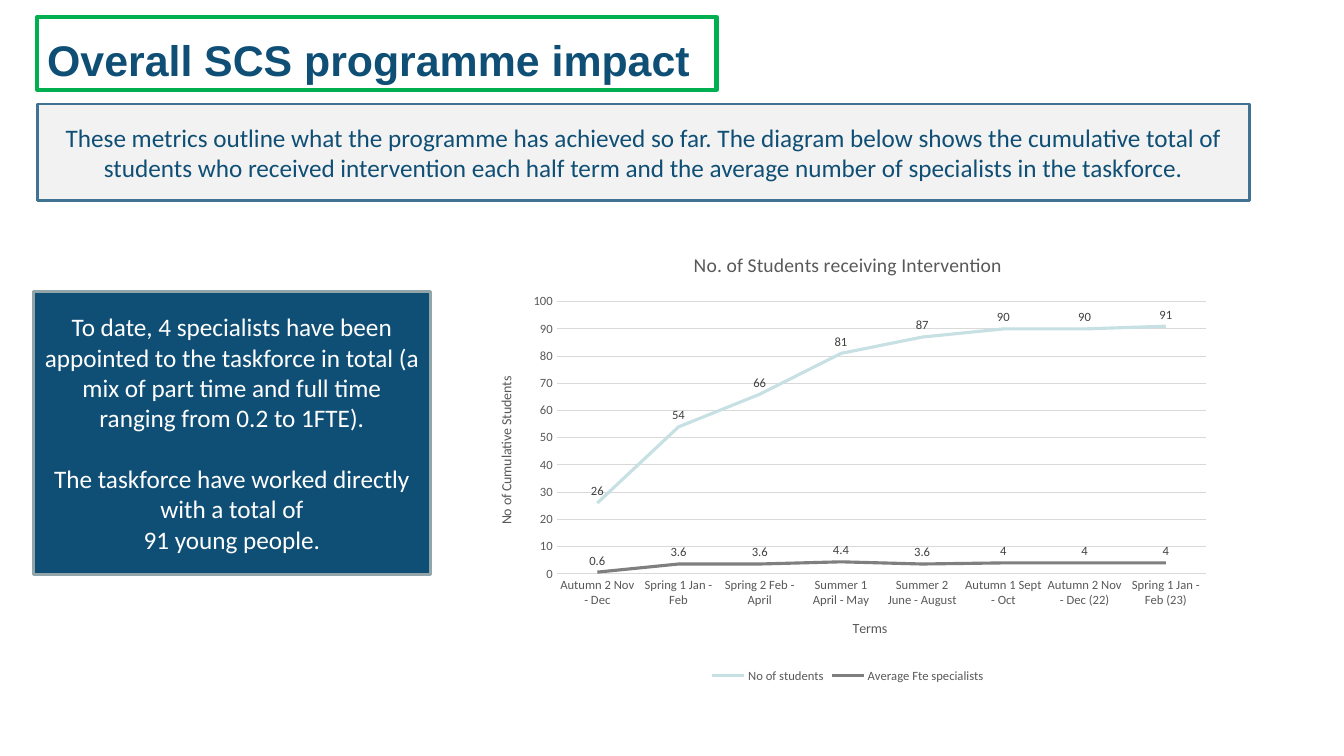
from dataclasses import dataclass

from pptx import Presentation
from pptx.chart.data import CategoryChartData as Data
from pptx.dml.color import RGBColor as Rgb
from pptx.enum.chart import XL_CHART_TYPE as Kind
from pptx.enum.chart import XL_LABEL_POSITION as Spot
from pptx.enum.chart import XL_LEGEND_POSITION as Side
from pptx.enum.chart import XL_TICK_MARK as Tick
from pptx.enum.shapes import MSO_SHAPE as Form
from pptx.enum.text import MSO_ANCHOR as Anchor
from pptx.enum.text import PP_ALIGN as Align
from pptx.oxml import parse_xml
from pptx.oxml.ns import nsdecls
from pptx.util import Cm, Pt


@dataclass
class Theme:
    navy: str = "104F75"
    green: str = "00B050"
    pale: str = "F2F2F2"
    blue: str = "407291"
    slate: str = "92A6A9"
    white: str = "FFFFFF"
    aqua: str = "C6E0E4"
    gray: str = "7F7F7F"
    grid: str = "D9D9D9"
    ink: str = "595959"
    dark: str = "404040"
    head: str = "Arial"
    body: str = "Calibri"
    title: float = 30.6
    text: float = 18
    chart: float = 14
    axis: float = 10
    small: float = 9
    gap: float = 22


class Deck:
    def __init__(self, theme):
        self.theme = theme
        self.file = Presentation()
        self.file.slide_width, self.file.slide_height = Cm(33.87), Cm(19.05)
        self.slide = self.file.slides.add_slide(self.file.slide_layouts[6])

    def font(self, font, size, color, face=None, bold=False):
        font.name = face or self.theme.body
        font.size = Pt(size)
        font.bold = bold
        font.color.rgb = Rgb.from_string(color)

    def line(self, line, color, width):
        line.color.rgb = Rgb.from_string(color)
        line.width = Pt(width)

    def box(self, area, text, edge, width, color, fill=None, size=None,
            face=None, bold=False, align=Align.CENTER, anchor=Anchor.MIDDLE):
        shape = self.slide.shapes.add_shape(Form.RECTANGLE, *map(Cm, area))
        shape.shadow.inherit = False
        if fill:
            shape.fill.solid()
            shape.fill.fore_color.rgb = Rgb.from_string(fill)
        else:
            shape.fill.background()
        self.line(shape.line, edge, width)
        frame = shape.text_frame
        frame.word_wrap = True
        frame.vertical_anchor = anchor
        frame.text = text
        for para in frame.paragraphs:
            para.alignment = align
            for run in para.runs:
                self.font(run.font, size or self.theme.text, color, face, bold)
        return frame

    def label(self, owner, text, size):
        frame = owner.text_frame
        frame.text = text
        self.font(frame.paragraphs[0].runs[0].font, size, self.theme.ink)

    def axis(self, axis, title):
        axis.major_tick_mark = axis.minor_tick_mark = Tick.NONE
        self.font(axis.tick_labels.font, self.theme.small, self.theme.ink)
        self.label(axis.axis_title, title, self.theme.axis)

    def place(self, chart, **parts):
        plot = chart.element.xpath(".//c:plotArea")[0]
        for old in plot.xpath("c:layout"):
            plot.remove(old)
        sizes = "".join(f'<c:{key} val="{val}"/>' for key, val in parts.items())
        plot.insert(0, parse_xml(
            f'<c:layout {nsdecls("c")}><c:manualLayout>'
            '<c:layoutTarget val="inner"/><c:xMode val="edge"/>'
            f'<c:yMode val="edge"/>{sizes}</c:manualLayout></c:layout>'))

    def graph(self, area, title, names, terms, series):
        look = self.theme
        data = Data()
        data.categories = terms
        for name, vals, _ in series:
            data.add_series(name, vals)
        chart = self.slide.shapes.add_chart(
            Kind.LINE, *map(Cm, area), data).chart
        self.font(chart.font, look.axis, look.ink)
        chart.has_title = True
        self.label(chart.chart_title, title, look.chart)
        chart.chart_title.include_in_layout = False

        base, side = chart.category_axis, chart.value_axis
        for axis, name in zip((base, side), names):
            self.axis(axis, name)
        self.line(base.format.line, look.grid, 0.75)
        side.format.line.fill.background()
        side.has_major_gridlines = True
        self.line(side.major_gridlines.format.line, look.grid, 0.75)
        side.minimum_scale, side.maximum_scale, side.major_unit = 0, 100, 10

        plot = chart.plots[0]
        plot.vary_by_categories = False
        for item, (_, _, color) in zip(plot.series, series):
            item.smooth = False
            self.line(item.format.line, color, 2.25)
            tags = item.data_labels
            tags.show_value = True
            tags.position = Spot.ABOVE
            self.font(tags.font, look.small, look.dark)

        chart.has_legend = True
        chart.legend.position = Side.BOTTOM
        chart.legend.include_in_layout = False
        self.font(chart.legend.font, look.small, look.ink)
        self.place(chart, x=0.11, y=0.15, w=0.87, h=0.6)


def main():
    look = Theme()
    deck = Deck(look)
    deck.box((0.94, 0.43, 17.12, 1.83), "Overall SCS programme impact",
             look.green, 3, look.navy, size=look.title, face=look.head,
             bold=True, align=Align.LEFT, anchor=Anchor.BOTTOM)
    deck.box((0.94, 2.62, 30.56, 2.44),
             "These metrics outline what the programme has achieved so far. "
             "The diagram below shows the cumulative total of students who "
             "received intervention each half term and the average number of "
             "specialists in the taskforce.",
             look.blue, 2, look.navy, look.pale)
    panel = deck.box((0.84, 7.34, 10.01, 7.14),
                     "To date, 4 specialists have been appointed to the "
                     "taskforce in total (a mix of part time and full time "
                     "ranging from 0.2 to 1FTE).\n"
                     "The taskforce have worked directly with a total of\n"
                     "91 young people.",
                     look.slate, 2, look.white, look.navy)
    panel.paragraphs[1].space_before = Pt(look.gap)
    deck.graph((11.96, 5.89, 18.82, 11.43),
               "No. of Students receiving Intervention",
               ("Terms", "No of Cumulative Students"),
               ("Autumn 2 Nov - Dec", "Spring 1 Jan - Feb",
                "Spring 2 Feb - April", "Summer 1 April - May",
                "Summer 2 June - August", "Autumn 1 Sept - Oct",
                "Autumn 2 Nov - Dec (22)", "Spring 1 Jan - Feb (23)"),
               (("No of students",
                 (26, 54, 66, 81, 87, 90, 90, 91), look.aqua),
                ("Average Fte specialists",
                 (0.6, 3.6, 3.6, 4.4, 3.6, 4, 4, 4), look.gray)))
    deck.file.save("out.pptx")


if __name__ == "__main__":
    main()
